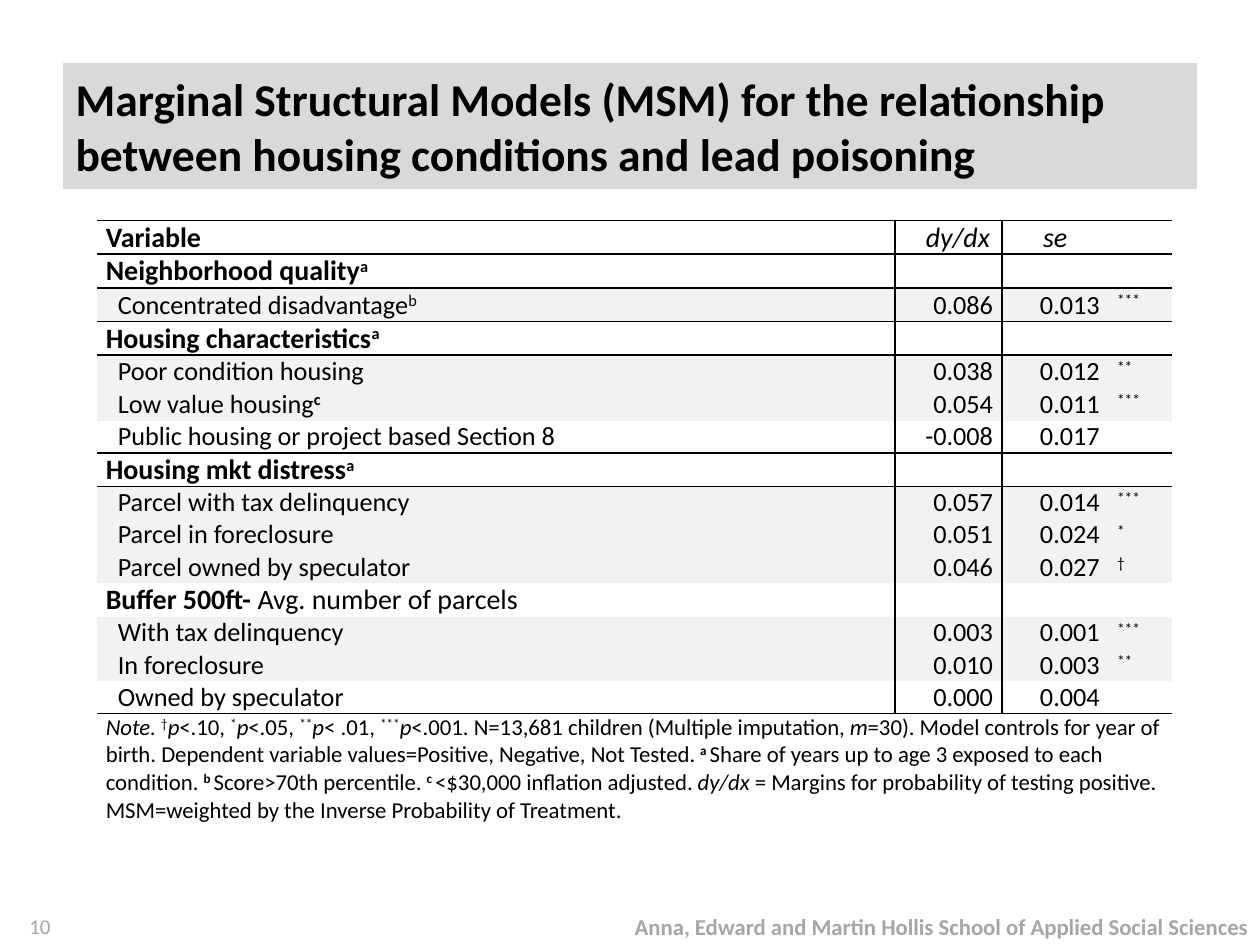
from dataclasses import dataclass

from lxml import etree
from pptx import Presentation
from pptx.dml.color import RGBColor
from pptx.enum.text import MSO_ANCHOR, MSO_AUTO_SIZE, PP_ALIGN
from pptx.oxml.ns import qn
from pptx.util import Pt

LEFT, MID, RIGHT = PP_ALIGN.LEFT, PP_ALIGN.CENTER, PP_ALIGN.RIGHT
CENTER, BOTTOM = MSO_ANCHOR.MIDDLE, MSO_ANCHOR.BOTTOM
FIXED = MSO_AUTO_SIZE.NONE
PLAIN = "{2D5ABB26-0587-4C30-8999-92F81FD0307C}"


@dataclass(frozen=True)
class Theme:
    font: str = "Calibri"
    ink: str = "000000"
    pale: str = "A6A6A6"
    band: str = "D9D9D9"
    shade: str = "F2F2F2"
    title: int = 26
    head: int = 16
    body: int = 15
    note: int = 13
    page: int = 12


THEME = Theme()
COLS = (456, 61, 61, 36)
PAD = 5
STEP = 6.8
RULES = {0, 2, 6, 14}

ROWS = [
    ([("Neighborhood quality", "b"), ("a", "bs")],),
    ([("Concentrated disadvantage", ""), ("b", "sl")], "0.086", "0.013", "***"),
    ([("Housing characteristics", "b"), ("a", "bs")],),
    ([("Poor condition housing", "")], "0.038", "0.012", "**"),
    ([("Low value housing", ""), ("c", "bsl")], "0.054", "0.011", "***"),
    ([("Public housing or project based Section 8", "")], "-0.008", "0.017", ""),
    ([("Housing mkt distress", "b"), ("a", "bs")],),
    ([("Parcel with tax delinquency", "")], "0.057", "0.014", "***"),
    ([("Parcel in foreclosure", "")], "0.051", "0.024", "*"),
    ([("Parcel owned by speculator", "")], "0.046", "0.027", "†"),
    ([("Buffer 500ft- ", "b"), ("Avg. number of parcels", "")],),
    ([("With tax delinquency", "")], "0.003", "0.001", "***"),
    ([("In foreclosure", "")], "0.010", "0.003", "**"),
    ([("Owned by speculator", "")], "0.000", "0.004", ""),
]

NOTE = [
    ("Note. ", "i"), ("†", "s"), ("p", "i"), ("<.10, ", ""),
    ("*", "s"), ("p", "i"), ("<.05, ", ""),
    ("**", "s"), ("p", "i"), ("< .01, ", ""),
    ("***", "s"), ("p", "i"),
    ("<.001. N=13,681 children (Multiple imputation, ", ""), ("m", "i"),
    ("=30). Model controls for year of birth. Dependent variable "
     "values=Positive, Negative, Not Tested. ", ""),
    ("a ", "bs"), ("Share of years up to age 3 exposed to each condition. ", ""),
    ("b ", "bs"), ("Score>70th percentile. ", ""),
    ("c ", "bs"), ("<$30,000 inflation adjusted. ", ""), ("dy/dx ", "i"),
    ("= Margins for probability of testing positive. MSM=weighted by the "
     "Inverse Probability of Treatment.", ""),
]


def write(frame, runs, size=THEME.body, color=THEME.ink, align=LEFT):
    para = frame.paragraphs[0]
    para.alignment = align
    for words, flags in runs:
        run = para.add_run()
        run.text = words
        font = run.font
        font.name = THEME.font
        font.size = Pt(THEME.head if "l" in flags else size)
        font.bold = "b" in flags
        font.italic = "i" in flags
        font.color.rgb = RGBColor.from_string(color)
        if "s" in flags:
            font._element.set("baseline", "30000")
    if not runs:
        etree.SubElement(para._p, qn("a:endParaRPr"), sz=str(size * 100))


def add_title(slide, words):
    box = slide.shapes.title
    box.left, box.top, box.width, box.height = Pt(36), Pt(36), Pt(648), Pt(72)
    box.fill.solid()
    box.fill.fore_color.rgb = RGBColor.from_string(THEME.band)
    frame = box.text_frame
    frame.auto_size = FIXED
    frame.vertical_anchor = CENTER
    write(frame, [(words, "b")], size=THEME.title)


def add_foot(slide, left, width, words, flags, size):
    box = slide.shapes.add_textbox(Pt(left), Pt(518.4), Pt(width), Pt(21.6))
    frame = box.text_frame
    frame.word_wrap = True
    frame.vertical_anchor = CENTER
    write(frame, [(words, flags)], size=size, color=THEME.pale, align=RIGHT)


def add_edges(cell, sides):
    props = cell._tc.get_or_add_tcPr()
    for side in "LRTB":
        if side in sides:
            line = etree.SubElement(props, qn("a:ln" + side), w=str(Pt(1)))
            fill = etree.SubElement(line, qn("a:solidFill"))
            etree.SubElement(fill, qn("a:srgbClr"), val=THEME.ink)


def set_cell(cell, runs, sides, shade=False, pad=PAD, anchor=BOTTOM, **form):
    add_edges(cell, sides)
    cell.margin_left, cell.margin_right = Pt(pad), Pt(PAD)
    cell.margin_top = cell.margin_bottom = 0
    cell.vertical_anchor = anchor
    if shade:
        cell.fill.solid()
        cell.fill.fore_color.rgb = RGBColor.from_string(THEME.shade)
    else:
        cell.fill.background()
    write(cell.text_frame, runs, **form)


def get_sides(row, col):
    sides = {0: "R", 1: "L"}.get(col, "")
    if row == 0 or row - 1 in RULES:
        sides += "T"
    if row in RULES:
        sides += "B"
    return sides


def fill_row(table, row, label, *vals):
    shade = bool(vals and vals[-1])
    size = THEME.body if vals else THEME.head
    pad = PAD + STEP if vals else PAD
    set_cell(table.cell(row, 0), label, get_sides(row, 0), shade, pad, size=size)
    for col, val in enumerate(vals or ("", "", ""), 1):
        last = col == 3
        set_cell(table.cell(row, col), [(val, "s" if last else "")] if val else [],
                 get_sides(row, col), shade, anchor=CENTER if last else BOTTOM,
                 align=LEFT if last else RIGHT)


def add_grid(slide):
    end = len(ROWS) + 1
    table = slide.shapes.add_table(end + 1, len(COLS), Pt(55.5), Pt(126),
                                   Pt(sum(COLS)), Pt(341)).table
    table.first_row = table.horz_banding = False
    table._tbl.tblPr.find(qn("a:tableStyleId")).text = PLAIN
    for col, width in zip(table.columns, COLS):
        col.width = Pt(width)
    for row in table.rows:
        row.height = Pt(18.4)
    table.rows[end].height = Pt(62)

    heads = [("Variable", "b", LEFT, PAD), ("dy/dx", "i", MID, PAD + 10.8),
             ("se", "i", MID, PAD), ("", "", LEFT, PAD)]
    for col, (words, flags, align, pad) in enumerate(heads):
        set_cell(table.cell(0, col), [(words, flags)] if words else [],
                 get_sides(0, col), pad=pad, size=THEME.head, align=align)
    for row, item in enumerate(ROWS, 1):
        fill_row(table, row, *item)
    note = table.cell(end, 0)
    note.merge(table.cell(end, 3))
    set_cell(note, NOTE, "T", size=THEME.note)


def main():
    deck = Presentation()
    deck.slide_width, deck.slide_height = Pt(720), Pt(540)
    slide = deck.slides.add_slide(deck.slide_layouts[5])
    add_foot(slide, 288, 432, "Anna, Edward and Martin Hollis School of Applied "
             "Social Sciences", "b", THEME.note)
    add_foot(slide, 0, 36, "10", "", THEME.page)
    add_title(slide, "Marginal Structural Models (MSM) for the relationship "
              "between housing conditions and lead poisoning")
    add_grid(slide)
    deck.save("out.pptx")


if __name__ == "__main__":
    main()
